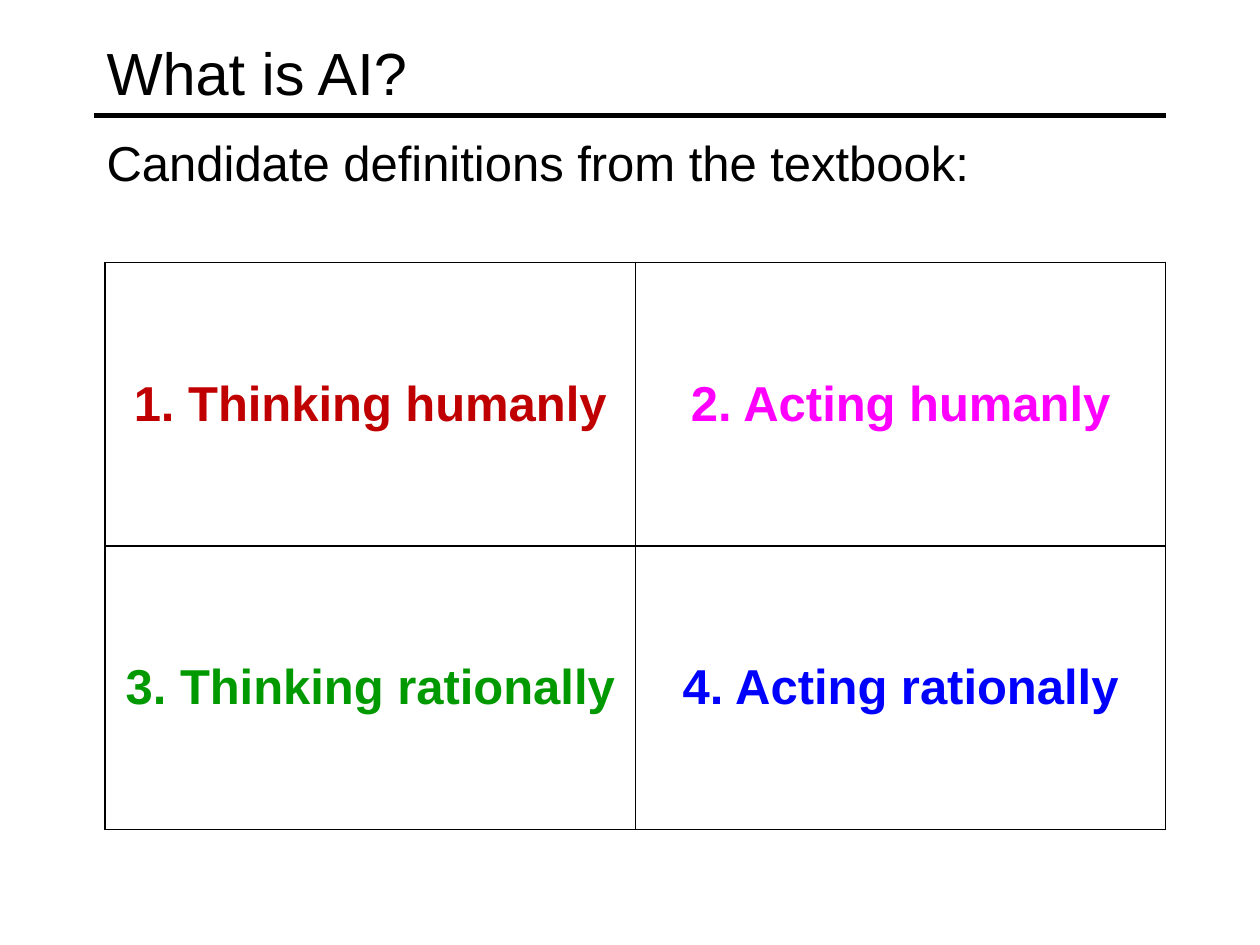
from lxml import etree
from pptx import Presentation
from pptx import util as u
from pptx.dml.color import RGBColor
from pptx.enum import shapes, text
from pptx.oxml.ns import qn

COLOURS = {
    "ink": "000000",
    "paper": "FFFFFF",
    "red": "C00000",
    "magenta": "FF00FF",
    "green": "009900",
    "blue": "0000FF",
}
DEFINITIONS = [
    [("1. Thinking humanly", "red"), ("2. Acting humanly", "magenta")],
    [("3. Thinking rationally", "green"), ("4. Acting rationally", "blue")],
]


def rgb(name):
    return RGBColor.from_string(COLOURS[name])


class SlideBuilder:
    """Draws styled elements on the current slide."""

    def __init__(self, page, typeface="Arial"):
        self.page = page
        self.typeface = typeface

    def paragraph(self, frame, words, size, colour="ink", bold=False):
        para = frame.paragraphs[0]
        para.text = words
        para.font.name = self.typeface
        para.font.size = u.Pt(size)
        para.font.bold = bold
        para.font.color.rgb = rgb(colour)
        return para

    def textbox(self, area, words, size, anchor, before=0):
        box = self.page.shapes.add_textbox(*map(u.Cm, area))
        box.text_frame.word_wrap = True
        box.text_frame.vertical_anchor = anchor
        self.paragraph(box.text_frame, words, size).space_before = u.Pt(before)

    def rule(self, left, right, top, width):
        line = self.page.shapes.add_connector(
            shapes.MSO_CONNECTOR.STRAIGHT, u.Cm(left), u.Cm(top), u.Cm(right), u.Cm(top)
        )
        line.line.color.rgb = rgb("ink")
        line.line.width = u.Pt(width)
        etree.SubElement(line._element.spPr, qn("a:effectLst"))

    def borders(self, cell, width):
        properties = cell._tc.get_or_add_tcPr()
        for index, side in enumerate(("lnL", "lnR", "lnT", "lnB")):
            edge = etree.Element(qn(f"a:{side}"), w=str(u.Pt(width)))
            fill = etree.SubElement(edge, qn("a:solidFill"))
            etree.SubElement(fill, qn("a:srgbClr"), val=COLOURS["ink"])
            properties.insert(index, edge)

    def table(self, area, rows, size):
        grid = self.page.shapes.add_table(len(rows), len(rows[0]), *map(u.Cm, area)).table
        for r, row in enumerate(rows):
            for c, (words, colour) in enumerate(row):
                cell = grid.cell(r, c)
                cell.fill.solid()
                cell.fill.fore_color.rgb = rgb("paper")
                cell.vertical_anchor = text.MSO_ANCHOR.MIDDLE
                para = self.paragraph(cell.text_frame, words, size, colour, bold=True)
                para.alignment = text.PP_ALIGN.CENTER
                self.borders(cell, 1)


def main():
    deck = Presentation()
    deck.slide_width, deck.slide_height = u.Cm(25.4), u.Cm(19.05)
    builder = SlideBuilder(deck.slides.add_slide(deck.slide_layouts[6]))
    builder.rule(1.9, 23.5, 2.33, 3)
    builder.textbox((1.9, 0.29, 21.6, 2.33), "What is AI?", 34, text.MSO_ANCHOR.MIDDLE)
    builder.textbox(
        (1.9, 2.54, 21.6, 14.6),
        "Candidate definitions from the textbook:",
        28,
        text.MSO_ANCHOR.TOP,
        before=4,
    )
    builder.table((2.12, 5.29, 21.38, 11.43), DEFINITIONS, 28)
    deck.save("out.pptx")


if __name__ == "__main__":
    main()
